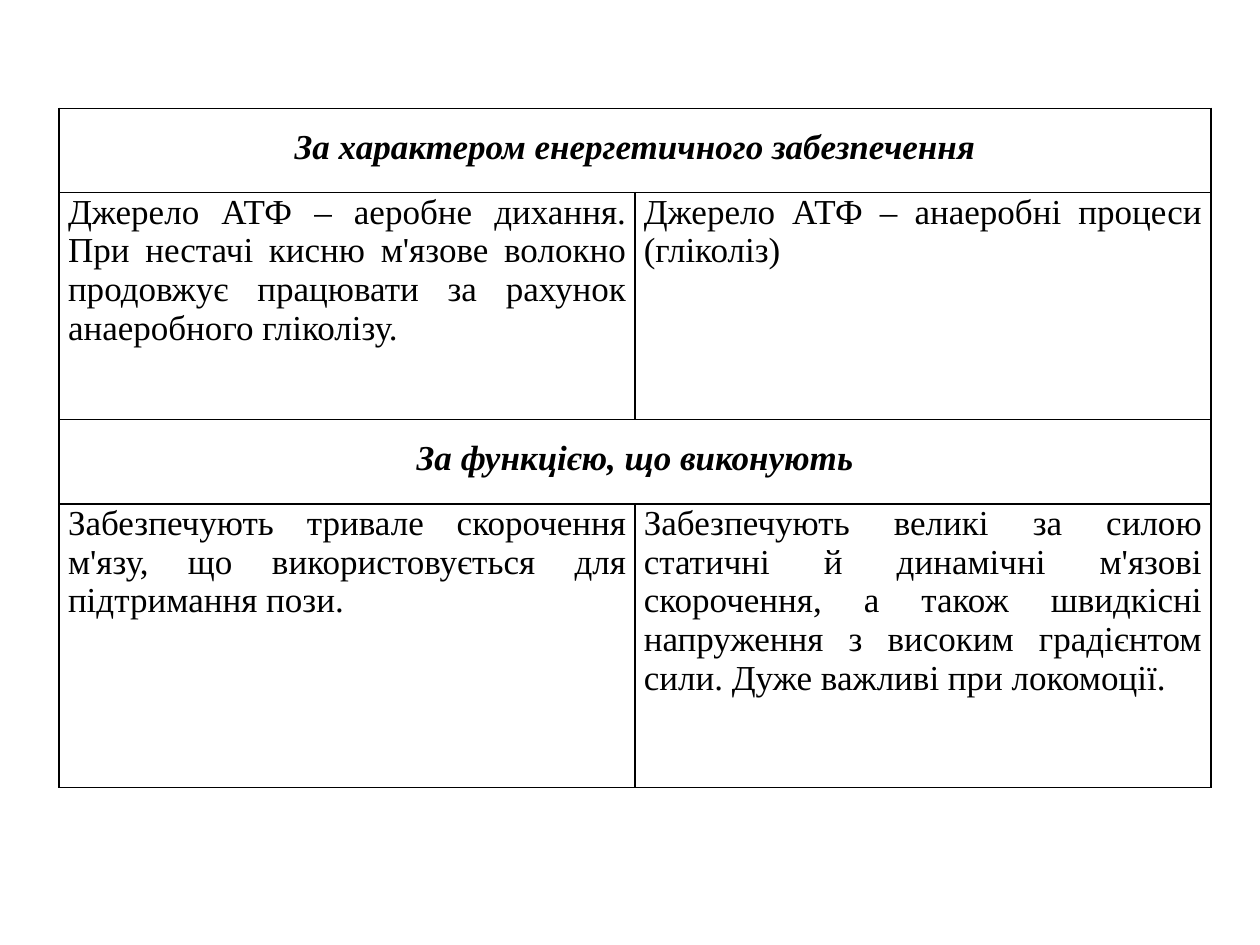
import pptx
import pptx.util
import pptx.dml.color
import pptx.enum.text
import pptx.oxml
import pptx.oxml.ns
from lxml import etree

Inches, Pt = pptx.util.Inches, pptx.util.Pt
ALIGN = pptx.enum.text.PP_ALIGN
COLORS = {"text": "000000", "border": "000000", "fill": "FFFFFF"}
FONT = "Times New Roman"

# A row with one text is a heading across both columns.
ROWS = [
    (0.67, ["За характером енергетичного забезпечення"]),
    (1.8, ["Джерело АТФ – аеробне дихання. При нестачі кисню м'язове волокно "
           "продовжує працювати за рахунок анаеробного гліколізу.",
           "Джерело АТФ – анаеробні процеси (гліколіз)"]),
    (0.67, ["За функцією, що виконують"]),
    (2.25, ["Забезпечують тривале скорочення м'язу, що використовується для "
            "підтримання пози.",
            "Забезпечують великі за силою статичні й динамічні м'язові "
            "скорочення, а також швидкісні напруження з високим градієнтом "
            "сили. Дуже важливі при локомоції."]),
]
COLUMNS = 2
LEFT, TOP, WIDTH = 0.47, 0.86, 9.14


def rgb(name):
    return pptx.dml.color.RGBColor.from_string(COLORS[name])


def format_cell(cell):
    cell.margin_left = cell.margin_right = Inches(0.07)
    cell.margin_top = cell.margin_bottom = 0
    tc_pr = cell._tc.get_or_add_tcPr()
    qn = pptx.oxml.ns.qn
    for side in ("lnL", "lnR", "lnT", "lnB"):
        line = etree.SubElement(tc_pr, qn(f"a:{side}"), w=str(Pt(1)))
        fill = etree.SubElement(line, qn("a:solidFill"))
        etree.SubElement(fill, qn("a:srgbClr"), val=COLORS["border"])
    cell.fill.solid()
    cell.fill.fore_color.rgb = rgb("fill")


def write_cell(cell, text, heading):
    p = cell.text_frame.paragraphs[0]
    p.alignment = ALIGN.CENTER if heading else ALIGN.JUSTIFY
    if heading:
        p.line_spacing = 1.5
    r = p.add_run()
    r.text = text
    r.font.name = FONT
    r.font.size = Pt(20)
    r.font.bold = r.font.italic = heading
    r.font.color.rgb = rgb("text")


def main():
    prs = pptx.Presentation()
    prs.slide_width, prs.slide_height = Inches(10), Inches(7.5)
    s = prs.slides.add_slide(prs.slide_layouts[6])
    height = sum(row_height for row_height, _ in ROWS)
    table = s.shapes.add_table(len(ROWS), COLUMNS, Inches(LEFT), Inches(TOP),
                               Inches(WIDTH), Inches(height)).table
    table.first_row = table.horz_banding = False
    for column in table.columns:
        column.width = Inches(WIDTH / COLUMNS)
    for i, (row_height, texts) in enumerate(ROWS):
        table.rows[i].height = Inches(row_height)
        heading = len(texts) == 1
        for j in range(COLUMNS):
            format_cell(table.cell(i, j))
        if heading:
            table.cell(i, 0).merge(table.cell(i, COLUMNS - 1))
        for j, text in enumerate(texts):
            write_cell(table.cell(i, j), text, heading)
    prs.save("out.pptx")


if __name__ == "__main__":
    main()
